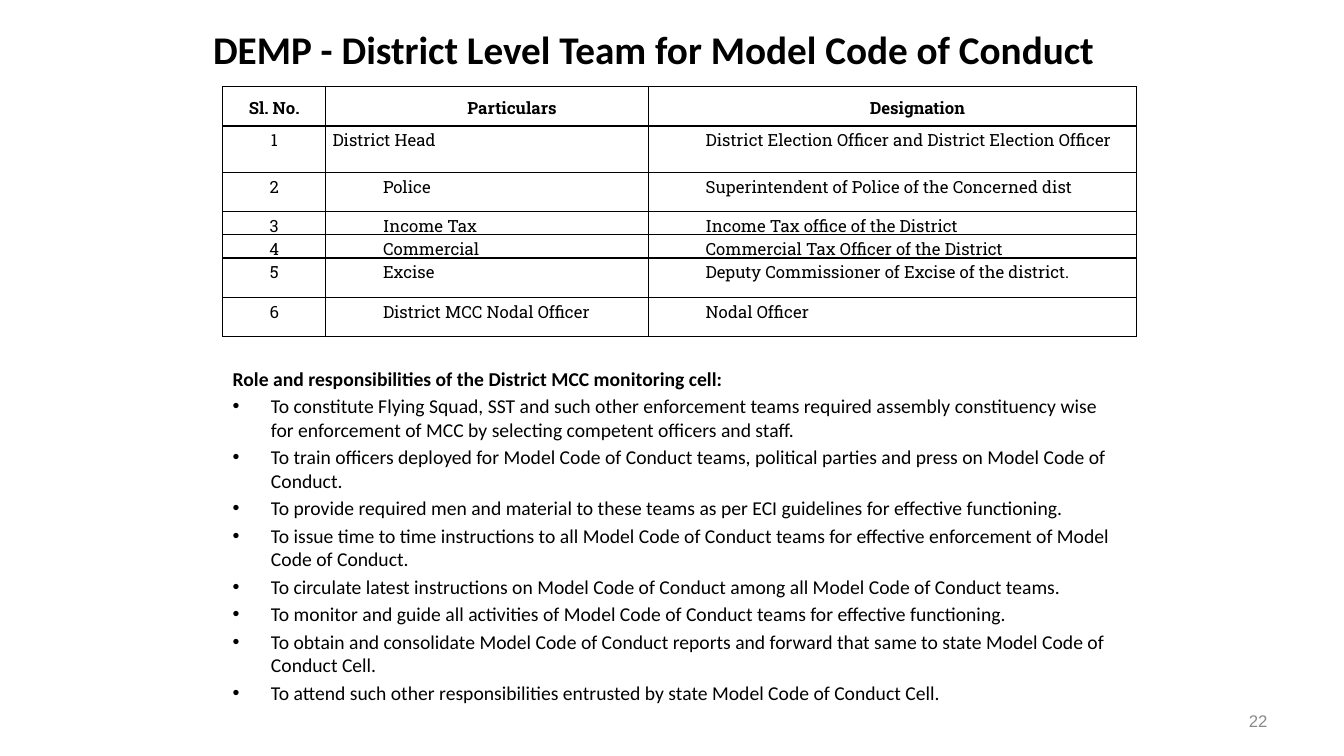
from lxml.etree import SubElement
from pptx import Presentation
from pptx.dml.color import RGBColor
from pptx.enum.text import MSO_ANCHOR, PP_ALIGN
from pptx.oxml.ns import qn
from pptx.util import Inches, Pt

TITLE = "DEMP - District Level Team for Model Code of Conduct"
TEAM = [
    ("Sl. No.", "Particulars", "Designation"),
    ("1", "District Head", "District Election Officer and District Election Officer"),
    ("2", "Police", "Superintendent of Police of the Concerned dist"),
    ("3", "Income Tax", "Income Tax office of the District"),
    ("4", "Commercial", "Commercial Tax Officer of the District"),
    ("5", "Excise", "Deputy Commissioner of Excise of the district."),
    ("6", "District MCC Nodal Officer", "Nodal Officer"),
]
COLS = [1.02, 3.2, 4.84]
ROWS = [0.39, 0.46, 0.39, 0.23, 0.23, 0.39, 0.39]
HEAD = "Role and responsibilities of the District MCC monitoring cell:"
ROLES = [
    "To constitute Flying Squad, SST and such other enforcement teams required "
    "assembly constituency wise for enforcement of MCC by selecting competent "
    "officers and staff.",
    "To train officers deployed for Model Code of Conduct teams, political "
    "parties and press on Model Code of Conduct.",
    "To provide required men and material to these teams as per ECI guidelines "
    "for effective functioning.",
    "To issue time to time instructions to all Model Code of Conduct teams for "
    "effective enforcement of Model Code of Conduct.",
    "To circulate latest instructions on Model Code of Conduct among all Model "
    "Code of Conduct teams.",
    "To monitor and guide all activities of Model Code of Conduct teams for "
    "effective functioning.",
    "To obtain and consolidate Model Code of Conduct reports and forward that "
    "same to state Model Code of Conduct Cell.",
    "To attend such other responsibilities entrusted by state Model Code of "
    "Conduct Cell.",
]


def color(code):
    return RGBColor.from_string(code)


def assign(item, form):
    for name, value in form.items():
        setattr(item, name, value)


def write(para, text, font, size, bold=False, ink="000000", **form):
    run = para.add_run()
    run.text = text
    assign(run.font, {"name": font, "size": Pt(size), "bold": bold})
    run.font.color.rgb = color(ink)
    assign(para, form)


def indent(para, left, first=0):
    props = para._p.get_or_add_pPr()
    props.set("marL", str(Inches(left)))
    props.set("indent", str(Inches(first)))
    return props


def frame(slide, box, anchor=MSO_ANCHOR.TOP):
    text = slide.shapes.add_textbox(*map(Inches, box)).text_frame
    assign(text, {"word_wrap": True, "vertical_anchor": anchor})
    return text


def border(cell):
    props = cell._tc.get_or_add_tcPr()
    for index, side in enumerate(("lnL", "lnR", "lnT", "lnB")):
        line = props.makeelement(qn("a:" + side), {"w": str(Pt(1))})
        fill = SubElement(line, qn("a:solidFill"))
        SubElement(fill, qn("a:srgbClr"), val="000000")
        props.insert(index, line)


def title(slide, box):
    text = frame(slide, box, MSO_ANCHOR.MIDDLE)
    write(text.paragraphs[0], TITLE, "Calibri", 28, True, alignment=PP_ALIGN.CENTER)


def team(slide, box):
    table = slide.shapes.add_table(len(ROWS), len(COLS), *map(Inches, box)).table
    assign(table, {"first_row": False, "horz_banding": False})
    for col, width in zip(table.columns, COLS):
        col.width = Inches(width)
    for row, height in zip(table.rows, ROWS):
        row.height = Inches(height)
    for r, words in enumerate(TEAM):
        for c, word in enumerate(words):
            cell = table.cell(r, c)
            assign(cell, {
                "margin_left": Inches(0.07), "margin_right": Inches(0.07),
                "margin_top": 0, "margin_bottom": 0,
                "vertical_anchor": MSO_ANCHOR.TOP if r else MSO_ANCHOR.MIDDLE,
            })
            cell.fill.background()
            border(cell)
            para = cell.text_frame.paragraphs[0]
            mid = r == 0 or c == 0
            write(para, word, "Roboto Slab", 12, r == 0, line_spacing=1.15,
                  alignment=PP_ALIGN.CENTER if mid else PP_ALIGN.LEFT)
            if c and (r, c) != (1, 1):
                indent(para, 0.5)
            elif r and c == 0:
                indent(para, 0.38, -0.38)
            # Space below the first and last designation
            if c == 2 and r in (0, len(TEAM) - 1):
                para.space_after = Pt(10)


def roles(slide, box):
    text = frame(slide, box)
    for index, line in enumerate([HEAD] + ROLES):
        para = text.add_paragraph() if index else text.paragraphs[0]
        write(para, line, "Calibri", 14, index == 0, space_before=Pt(2.8))
        props = indent(para, 0.38, -0.38)
        if index:
            SubElement(props, qn("a:buFont"), typeface="Arial")
            SubElement(props, qn("a:buChar"), char="•")


def number(slide, box):
    text = frame(slide, box, MSO_ANCHOR.MIDDLE)
    write(text.paragraphs[0], "22", "Arial", 12, ink="898989",
          alignment=PP_ALIGN.RIGHT)


def main():
    deck = Presentation()
    assign(deck, {"slide_width": Inches(13.33), "slide_height": Inches(7.5)})
    slide = deck.slides.add_slide(deck.slide_layouts[6])
    title(slide, (1.98, 0.16, 9, 0.64))
    roles(slide, (2.21, 3.59, 9, 3.67))
    team(slide, (2.21, 0.86, sum(COLS), sum(ROWS)))
    number(slide, (9.56, 6.95, 3.11, 0.4))
    deck.save("out.pptx")


if __name__ == "__main__":
    main()
